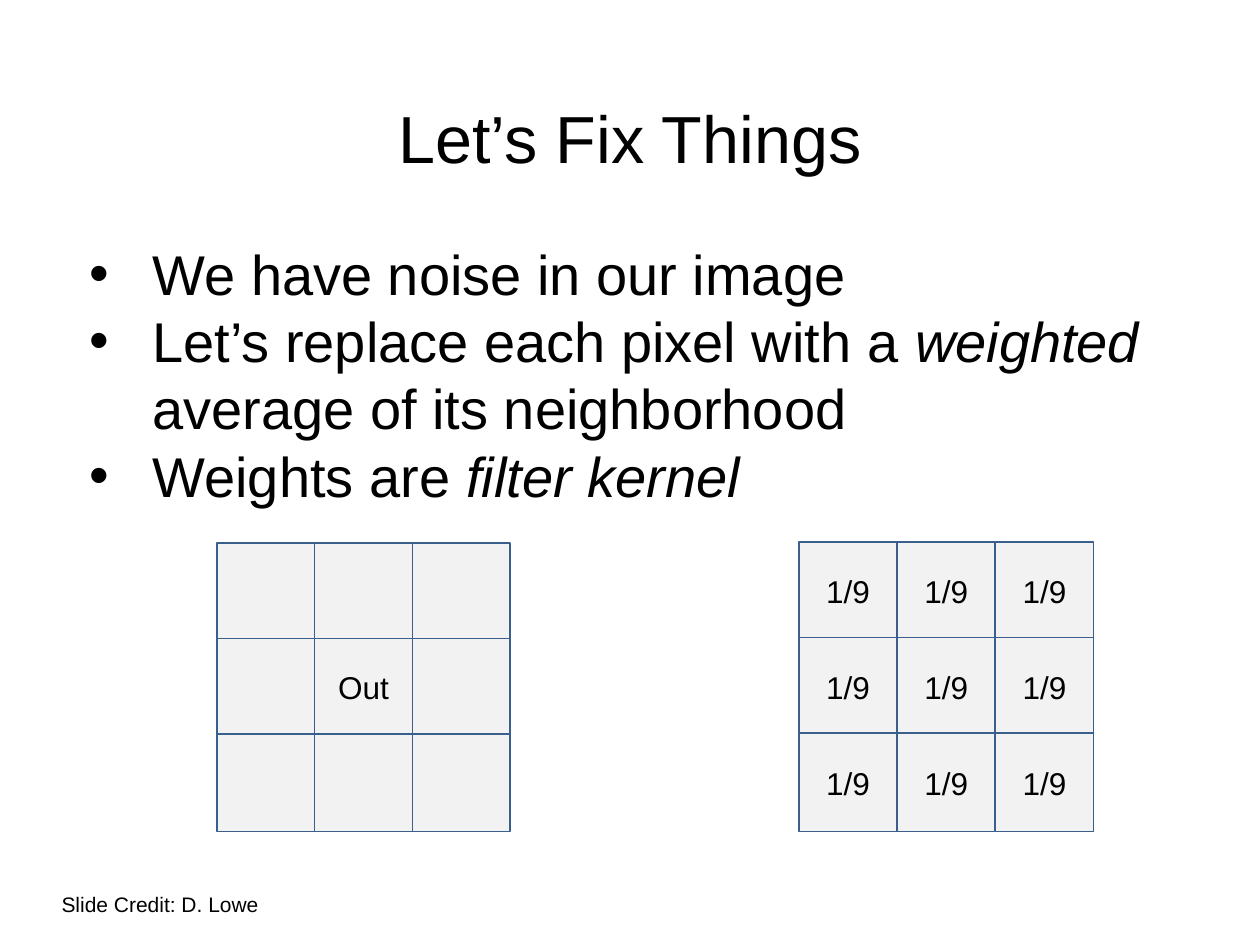
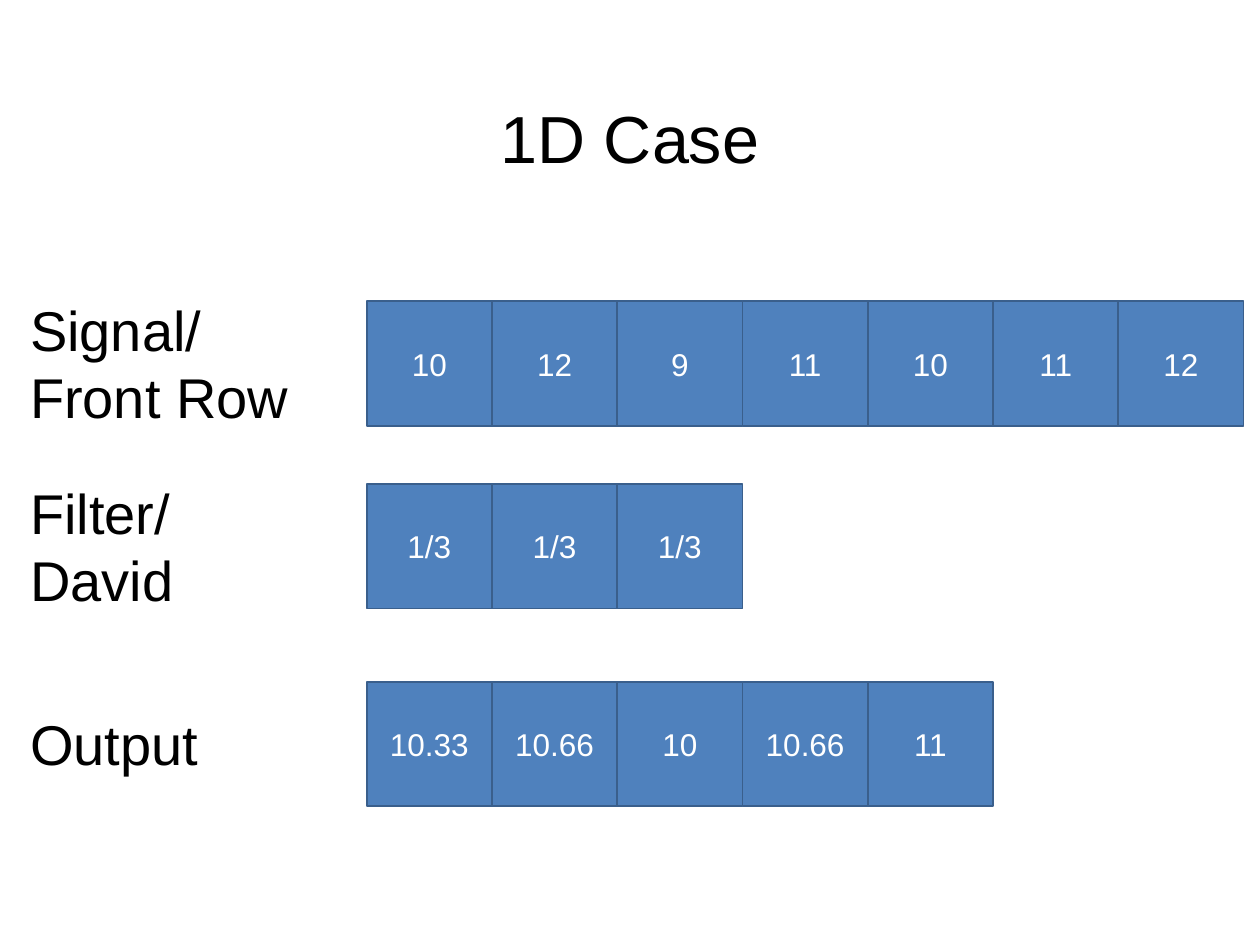
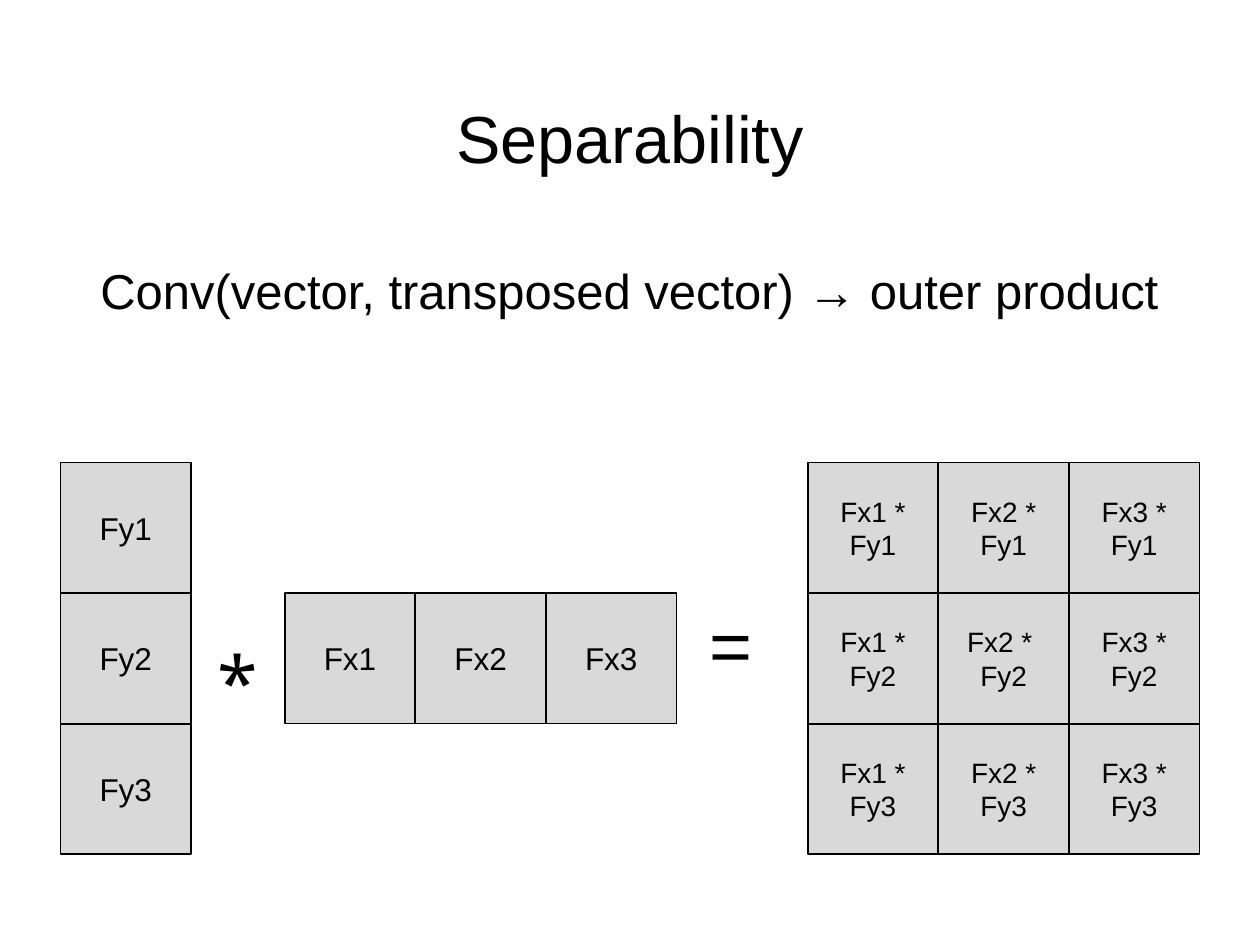
from pptx import Presentation
from pptx.dml.color import RGBColor
from pptx.enum.shapes import MSO_SHAPE
from pptx.enum.text import MSO_ANCHOR, MSO_AUTO_SIZE, PP_ALIGN
from pptx.util import Emu, Pt

PX = 9144
RECTANGLE = MSO_SHAPE.RECTANGLE
LEFT, CENTER = PP_ALIGN.LEFT, PP_ALIGN.CENTER
TOP, MIDDLE = MSO_ANCHOR.TOP, MSO_ANCHOR.MIDDLE
NO_AUTOFIT = MSO_AUTO_SIZE.NONE
TITLE_AND_BODY, TITLE_ONLY = 1, 5

BLACK, WHITE = "000000", "FFFFFF"
PALE_GRAY, GRAY = "F2F2F2", "D9D9D9"
BLUE, STEEL = "4F81BD", "3A5F8C"
FONT, ARROW_FONT = "Arial", "Times New Roman"
ITALIC = {"italic": True}
TITLE_BOX = (69, 40, 862, 145)


def px(length):
    """Turn a length in px into EMU."""
    return Emu(round(length * PX))


def color(hex_string):
    """Turn a hex string into a colour."""
    return RGBColor.from_string(hex_string)


def set_values(target, values):
    """Set each named attribute of the target."""
    for name, value in values.items():
        setattr(target, name, value)


def place(shape, box):
    """Move and size a shape to a box in px."""
    names = ("left", "top", "width", "height")
    set_values(shape, dict(zip(names, map(px, box))))


def write(shape, paragraphs, size, text_color=BLACK, anchor=TOP, **paragraph_format):
    """Fill a shape with paragraphs, each a string or a list of (text, format) runs."""
    frame = shape.text_frame
    set_values(frame, {"word_wrap": True, "auto_size": NO_AUTOFIT, "vertical_anchor": anchor})
    for index, runs in enumerate(paragraphs):
        paragraph = frame.add_paragraph() if index else frame.paragraphs[0]
        set_values(paragraph, paragraph_format)
        for text, run_format in [(runs, {})] if isinstance(runs, str) else runs:
            run = paragraph.add_run()
            run.text = text
            set_values(run.font, {"name": FONT, "size": Pt(size), **run_format})
            run.font.color.rgb = color(text_color)


def add_titled_slide(presentation, layout, title):
    """Add a slide with the shared title style."""
    slide = presentation.slides.add_slide(presentation.slide_layouts[layout])
    place(slide.shapes.title, TITLE_BOX)
    write(slide.shapes.title, [title], 38, anchor=MIDDLE, alignment=CENTER, line_spacing=0.9)
    return slide


def add_text(slide, box, paragraphs, size, alignment=LEFT):
    """Add a text box."""
    text_box = slide.shapes.add_textbox(*map(px, box))
    write(text_box, paragraphs, size, alignment=alignment)


def add_bullets(slide, box, paragraphs):
    """Fill the body placeholder with a bulleted list."""
    body = slide.placeholders[1]
    place(body, box)
    write(body, paragraphs, 32, alignment=LEFT, space_before=Pt(0))
    for paragraph in body.text_frame.paragraphs:
        properties = paragraph._p.get_or_add_pPr()
        properties.set("marL", str(px(50)))
        properties.set("indent", str(px(-50)))


def add_grid(slide, box, rows, fill, line, text_color=BLACK, size=18, overlap=0):
    """Divide a box into equal cells, whose rows may overlap."""
    left, top, width, height = box
    cell_width = width / len(rows[0])
    cell_height = (height + overlap * (len(rows) - 1)) / len(rows)
    for row_index, row in enumerate(rows):
        for column_index, text in enumerate(row):
            x = left + column_index * cell_width
            y = top + row_index * (cell_height - overlap)
            cell = slide.shapes.add_shape(RECTANGLE, *map(px, (x, y, cell_width, cell_height)))
            cell.shadow.inherit = False
            cell.fill.solid()
            cell.fill.fore_color.rgb = color(fill)
            cell.line.color.rgb = color(line)
            cell.line.width = Pt(1)
            if text:
                write(cell, text.split("\n"), size, text_color, MIDDLE, alignment=CENTER)


def add_labelled_row(slide, box, label, values, capacity):
    """Add a row of blue cells with a label centred beside it."""
    left, top, width, height = box
    label_height = 10 + 54 * len(label)
    label_top = top + (height - label_height) / 2
    add_text(slide, (left, label_top, 277, label_height), label, 32)
    cells_width = (width - 277) * len(values) / capacity
    add_grid(slide, (left + 277, top, cells_width, height), [values], BLUE, STEEL, WHITE)


def add_outer_product(slide, box):
    """Show a column times a row giving a square of products."""
    left, top, width, side = box
    unit = side / 3
    column = [f"Fy{number}" for number in (1, 2, 3)]
    row = [f"Fx{number}" for number in (1, 2, 3)]
    products = [[f"{x} * {y}" for x in row] for y in column]
    products[1][1] = "Fx2 * \nFy2"
    grids = [
        ((left, top, unit, side), [[name] for name in column], 18),
        ((left + 178, top + unit, side, unit), [row], 18),
        ((left + width - side, top, side, side), products, 16),
    ]
    for grid_box, rows, size in grids:
        add_grid(slide, grid_box, rows, GRAY, BLACK, size=size)
    for offset, symbol in ((109, "⁎"), (501, "=")):
        add_text(slide, (left + offset, top + unit, 63, 101), [symbol], 42, CENTER)


def build_filter_slide(presentation):
    """Build the slide on averaging with a filter kernel."""
    slide = add_titled_slide(presentation, TITLE_AND_BODY, "Let’s Fix Things")
    add_text(slide, (39, 703, 603, 30), ["Slide Credit: D. Lowe"], 12)
    add_bullets(slide, (61, 185, 902, 226), [
        "We have noise in our image",
        [("Let’s replace each pixel with a ", {}), ("weighted", ITALIC),
         (" average of its neighborhood", {})],
        [("Weights are ", {}), ("filter kernel", ITALIC)],
    ])
    neighborhood = [[""] * 3, ["", "Out", ""], [""] * 3]
    kernel = [["1/9"] * 3] * 3
    add_grid(slide, (634, 430, 234, 230), kernel, PALE_GRAY, STEEL, overlap=2)
    add_grid(slide, (172, 431, 233, 229), neighborhood, PALE_GRAY, STEEL, overlap=2)


def build_signal_slide(presentation):
    """Build the slide on filtering a one-dimensional signal."""
    slide = add_titled_slide(presentation, TITLE_ONLY, "1D Case")
    signal = ["10", "12", "9", "11", "10", "11", "12"]
    rows = [
        (239, ["Signal/", "Front Row"], signal),
        (384, ["Filter/", "David"], ["1/3"] * 3),
        (541, ["Output"], ["10.33", "10.66", "10", "10.66", "11"]),
    ]
    for top, label, values in rows:
        add_labelled_row(slide, (14, top, 973, 99), label, values, len(signal))


def build_separability_slide(presentation):
    """Build the slide on the outer product of two vectors."""
    slide = add_titled_slide(presentation, TITLE_ONLY, "Separability")
    statement = [("Conv(vector, transposed vector) ", {}), ("→", {"name": ARROW_FONT}),
                 (" outer product", {})]
    add_text(slide, (48, 202, 903, 57), [statement], 28, CENTER)
    add_outer_product(slide, (48, 367, 904, 311))


def main():
    """Build and save the presentation."""
    presentation = Presentation()
    set_values(presentation, {"slide_width": px(1000), "slide_height": px(750)})
    for build in (build_filter_slide, build_signal_slide, build_separability_slide):
        build(presentation)
    presentation.save("out.pptx")


if __name__ == "__main__":
    main()
